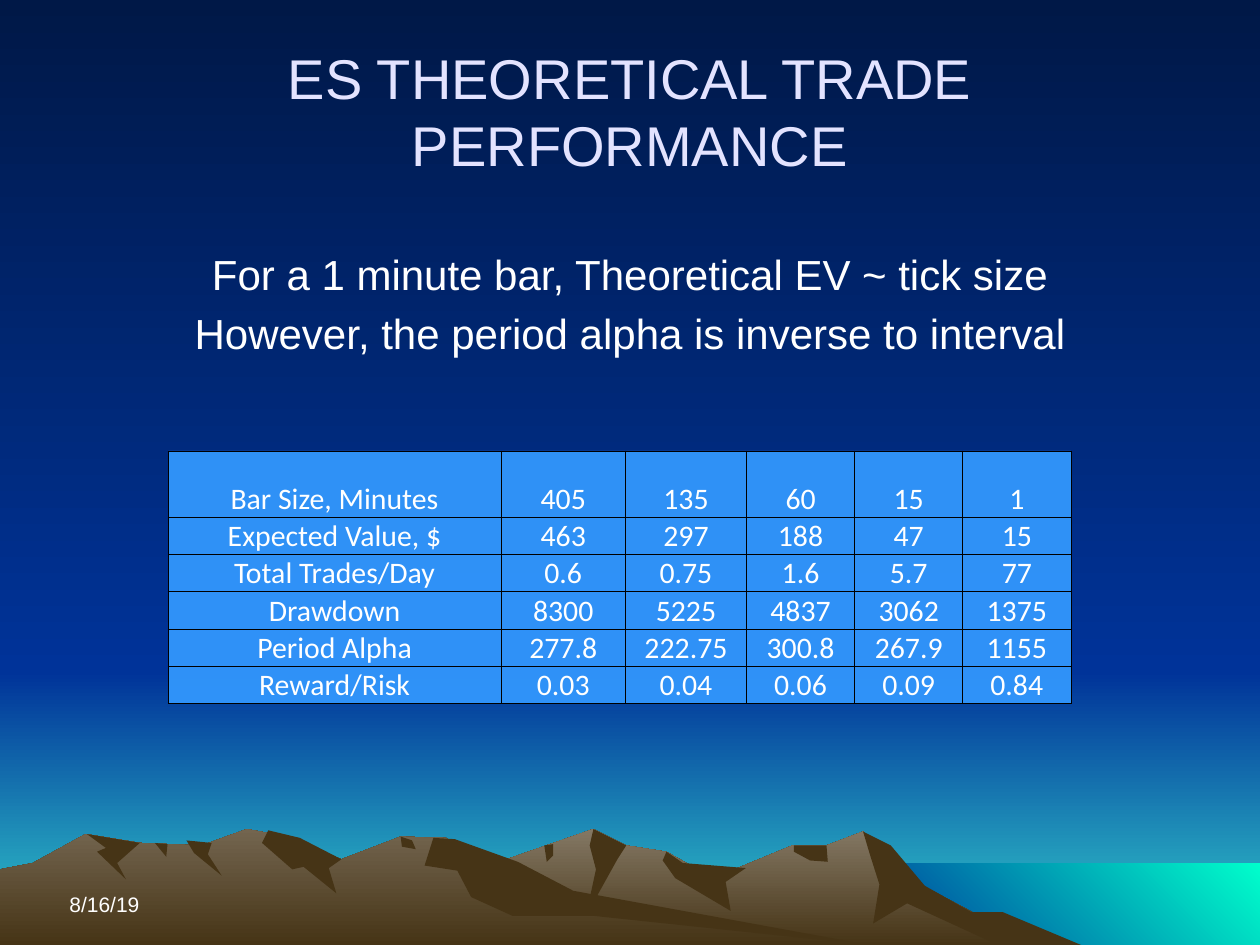
from lxml import etree
from pptx import Presentation
from pptx import util as u
from pptx.dml import color
from pptx.enum import shapes, text
from pptx.oxml import ns

Cm = u.Cm
WIDTH, HEIGHT = 25.4, 19.05
GRID_WIDTH = 1000
EARTH, WHITE, NAVY, NIGHT = "463416", "FFFFFF", "003399", "001847"

FRONT_SLOPE = [(258, 750), (327, 709), (405, 681), (471, 658), (497, 671), (529, 676),
               (566, 697), (629, 671), (656, 671), (685, 660), (723, 698), (821, 750)]
LEFT_SLOPE = [(0, 690), (26, 685), (68, 662), (111, 669), (160, 671), (196, 658),
              (223, 663), (271, 682), (318, 664), (354, 665), (432, 712), (690, 750)]
FRONT_SHADOWS = [
    [(685, 660), (691, 680), (698, 702), (693, 733), (720, 717), (792, 750), (858, 750),
     (796, 724), (771, 724), (734, 703), (707, 671)],
    [(471, 658), (468, 671), (473, 690), (465, 727), (490, 682), (497, 671)],
    [(529, 676), (526, 683), (536, 697), (580, 723), (576, 700), (592, 689), (542, 685)],
    [(630, 671), (630, 676), (643, 683), (657, 684), (656, 671)],
    [(432, 671), (439, 670), (439, 679), (434, 684)],
]
LEFT_SHADOWS = [
    [(213, 659), (208, 669), (232, 690), (241, 688), (267, 709), (261, 689), (271, 682),
     (238, 665)],
    [(344, 665), (337, 687), (363, 691), (374, 712), (407, 727), (472, 727), (690, 750),
     (455, 707), (411, 684), (361, 666)],
    [(318, 664), (327, 667), (330, 674), (319, 672)],
    [(148, 667), (168, 669), (165, 678), (176, 695), (154, 677)],
    [(123, 669), (133, 670), (132, 680)],
    [(69, 662), (111, 669), (93, 685), (100, 698), (77, 676), (84, 673)],
]

ROWS = [
    "Bar Size, Minutes|405|135|60|15|1",
    "Expected Value, $|463|297|188|47|15",
    "Total Trades/Day|0.6|0.75|1.6|5.7|77",
    "Drawdown|8300|5225|4837|3062|1375",
    "Period Alpha|277.8|222.75|300.8|267.9|1155",
    "Reward/Risk|0.03|0.04|0.06|0.09|0.84",
]
COLUMN_WIDTHS = [6.71, 2.51, 2.44] + [2.18] * 3
ROW_HEIGHTS = [1.34] + [0.75] * 5


def rgb(value):
    return color.RGBColor.from_string(value)


def paint(fill, paints, angle=90):
    if isinstance(paints, str):
        fill.solid()
        fill.fore_color.rgb = rgb(paints)
        return
    fill.gradient()
    fill.gradient_angle = angle
    for stop, value in zip(fill.gradient_stops, paints):
        stop.color.rgb = rgb(value)


def finish(shape, paints, angle=90):
    paint(shape.fill, paints, angle)
    shape.line.fill.background()
    shape.shadow.inherit = False


def add_band(page, box, paints, angle=90):
    band = page.shapes.add_shape(shapes.MSO_SHAPE.RECTANGLE, *map(Cm, box))
    finish(band, paints, angle)


def add_backdrop(page, box):
    left, top, width, height = box
    horizon, shore, beach = 13.54, 17.4, 17.35
    add_band(page, (left, top + horizon, width, height - horizon), ("33CCCC", NAVY))
    add_band(page, (left, top, width, horizon), (NAVY, NIGHT))
    add_band(page, (left + beach, top + shore, width - beach, height - shore),
             ("00FFCC", NAVY), 225)


def add_range(page, box, slope, crest, shadows):
    left, top, width, _ = box
    foot = [(slope[-1][0], 750), (slope[0][0], 750)]
    layers = [(slope + foot, (EARTH, crest))] + [(shadow, EARTH) for shadow in shadows]
    for outline, paints in layers:
        builder = page.shapes.build_freeform(*outline[0], scale=Cm(width) / GRID_WIDTH)
        builder.add_line_segments(outline[1:], close=True)
        finish(builder.convert_to_shape(Cm(left), Cm(top)), paints)


def style(para, size, font, value, align):
    para.alignment = align
    for span in para.runs:
        span.font.size = u.Pt(size)
        span.font.name = font
        span.font.color.rgb = rgb(value)


def add_text(page, box, lines, size, value=WHITE, align=text.PP_ALIGN.CENTER,
             anchor=text.MSO_ANCHOR.TOP):
    frame = page.shapes.add_textbox(*map(Cm, box)).text_frame
    frame.word_wrap = True
    frame.vertical_anchor = anchor
    frame.margin_left = frame.margin_right = frame.margin_top = frame.margin_bottom = Cm(0.13)
    frame.text = "\n".join(lines)
    for index, para in enumerate(frame.paragraphs):
        style(para, size, "Arial", value, align)
        if index:
            para.space_before = u.Pt(5)


def format_cell(cell):
    cell.margin_left = cell.margin_right = cell.margin_top = cell.margin_bottom = 0
    cell.vertical_anchor = text.MSO_ANCHOR.BOTTOM
    style(cell.text_frame.paragraphs[0], 17, "Calibri", WHITE, text.PP_ALIGN.CENTER)
    properties = cell._tc.get_or_add_tcPr()
    for side in ("a:lnL", "a:lnR", "a:lnT", "a:lnB"):
        border = etree.SubElement(properties, ns.qn(side), w=str(u.Pt(0.5)))
        solid = etree.SubElement(border, ns.qn("a:solidFill"))
        etree.SubElement(solid, ns.qn("a:srgbClr"), val="000000")
    paint(cell.fill, "3399FF")
    tint = properties.find(ns.qn("a:solidFill")).find(ns.qn("a:srgbClr"))
    etree.SubElement(tint, ns.qn("a:alpha"), val="93000")


def add_performance_table(page, box):
    table = page.shapes.add_table(len(ROWS), len(COLUMN_WIDTHS), *map(Cm, box)).table
    for column, width in zip(table.columns, COLUMN_WIDTHS):
        column.width = Cm(width)
    for row, height, values in zip(table.rows, ROW_HEIGHTS, ROWS):
        row.height = Cm(height)
        for cell, value in zip(row.cells, values.split("|")):
            cell.text_frame.text = value
            format_cell(cell)


def main():
    deck = Presentation()
    deck.slide_width, deck.slide_height = Cm(WIDTH), Cm(HEIGHT)
    page = deck.slides.add_slide(deck.slide_layouts[6])
    paint(page.background.fill, (NAVY, NIGHT))
    full = (0, 0, WIDTH, HEIGHT)
    add_backdrop(page, full)
    add_range(page, full, FRONT_SLOPE, "847864", FRONT_SHADOWS)
    add_range(page, full, LEFT_SLOPE, "73654F", LEFT_SHADOWS)
    add_text(page, (1.27, 0.64, 22.86, 3.18), ["ES THEORETICAL TRADE PERFORMANCE"],
             32, "E3E3FF", anchor=text.MSO_ANCHOR.MIDDLE)
    add_text(page, (2.12, 4.88, 21.16, 10.8),
             ["For a 1 minute bar, Theoretical EV ~ tick size",
              "However, the period alpha is inverse to interval"], 24)
    add_performance_table(page, (3.39, 9.09, sum(COLUMN_WIDTHS), sum(ROW_HEIGHTS)))
    add_text(page, (1.27, 17.88, 5.93, 0.74), ["8/16/19"], 12,
             align=text.PP_ALIGN.LEFT, anchor=text.MSO_ANCHOR.BOTTOM)
    deck.save("out.pptx")


if __name__ == "__main__":
    main()
